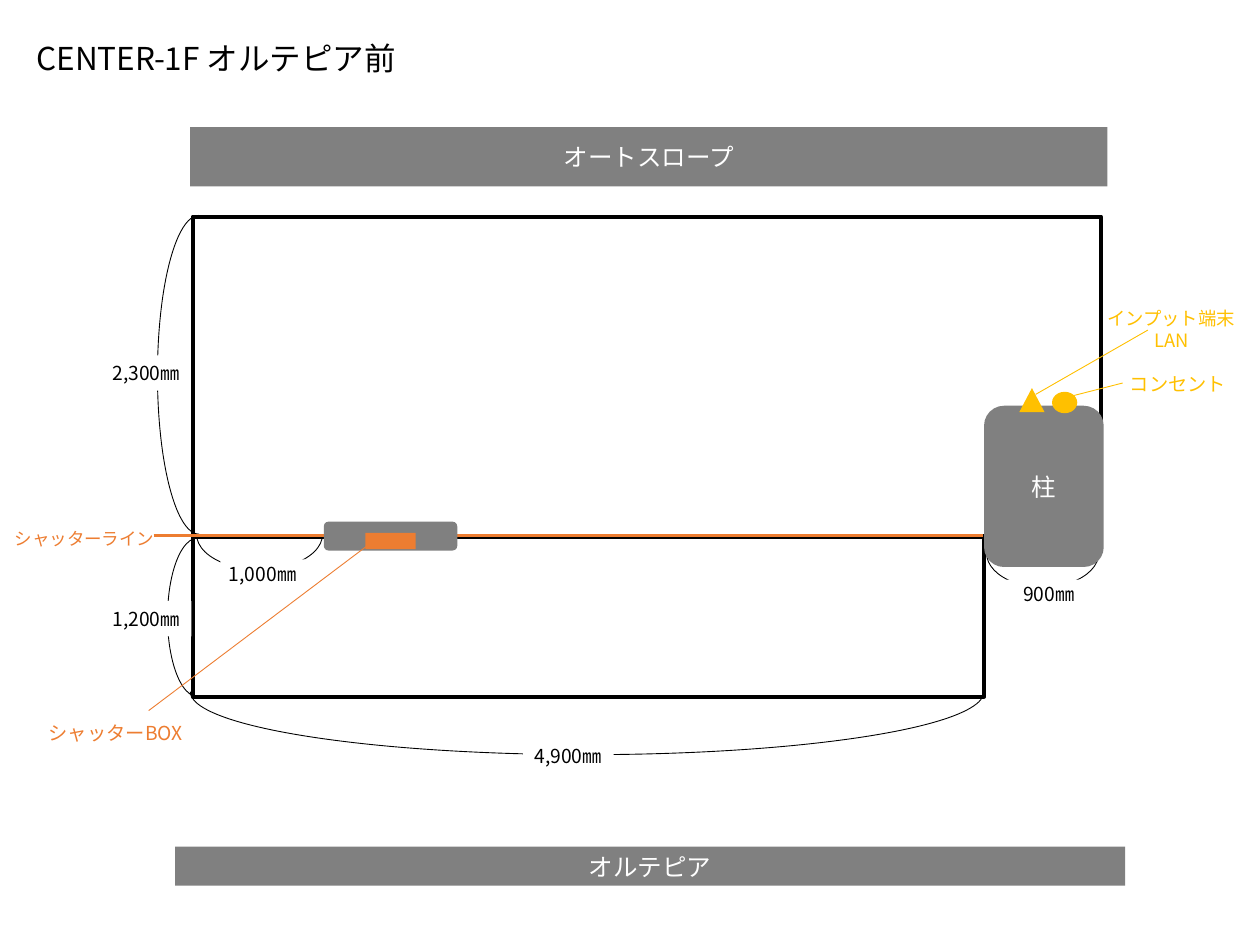
from lxml.etree import SubElement
from pptx import Presentation
from pptx.dml.color import RGBColor
from pptx.enum.shapes import MSO_CONNECTOR, MSO_SHAPE
from pptx.enum.text import MSO_ANCHOR, PP_ALIGN
from pptx.oxml.ns import qn
from pptx.util import Inches, Pt

FONT = "Noto Sans CJK JP"
BLACK, WHITE, GRAY = "000000", "FFFFFF", "808080"
ORANGE, YELLOW = "ED7D31", "FFC000"


def color(hex_string):
    return RGBColor.from_string(hex_string)


class FloorPlan:
    def __init__(self, slide):
        self.slide = slide
        self.shapes = slide.shapes

    def caption(self, owner, text, size, ink, align=PP_ALIGN.CENTER,
                anchor=MSO_ANCHOR.MIDDLE, margin=None):
        frame = owner.text_frame
        frame.text = text
        frame.word_wrap = True
        frame.vertical_anchor = anchor
        if margin is not None:
            frame.margin_left = frame.margin_right = Inches(margin)
            frame.margin_top = frame.margin_bottom = Inches(margin)
        paragraph = frame.paragraphs[0]
        paragraph.alignment = align
        for run in paragraph.runs:
            run.font.size = Pt(size)
            run.font.name = FONT
            run.font.color.rgb = color(ink)
            SubElement(run.font._element, qn("a:ea"), typeface=FONT)

    def block(self, kind, box, fill=None, line=None, width=0.5):
        shape = self.shapes.add_shape(kind, *map(Inches, box))
        shape.shadow.inherit = False
        if fill:
            shape.fill.solid()
            shape.fill.fore_color.rgb = color(fill)
        else:
            shape.fill.background()
        if line:
            shape.line.color.rgb = color(line)
            shape.line.width = Pt(width)
        else:
            shape.line.fill.background()
        return shape

    def named_block(self, kind, box, name):
        self.caption(self.block(kind, box, GRAY), name, 14, WHITE)

    def label(self, box, text, size, ink, **style):
        self.caption(self.shapes.add_textbox(*map(Inches, box)), text, size, ink, **style)

    def line(self, start, end, ink, width=0.5):
        connector = self.shapes.add_connector(
            MSO_CONNECTOR.STRAIGHT, *map(Inches, (*start, *end)))
        connector.line.color.rgb = color(ink)
        connector.line.width = Pt(width)
        SubElement(connector._element.spPr, qn("a:effectLst"))

    def dimension(self, arc, box, text, below=False):
        """Draw a half-round bracket with its length set over the middle."""
        bracket = self.block(MSO_SHAPE.LEFT_BRACKET, arc, line=BLACK)
        bracket.adjustments[0] = arc[3] / arc[2] / 2
        if below:
            bracket.rotation = 270
            bracket._element.spPr.xfrm.set("flipV", "1")
        self.caption(self.block(MSO_SHAPE.RECTANGLE, box, WHITE), text, 11, BLACK, margin=0)


def main():
    prs = Presentation()
    prs.slide_width, prs.slide_height = Inches(10), Inches(7.5)
    plan = FloorPlan(prs.slides.add_slide(prs.slide_layouts[6]))

    # Title and neighbouring areas
    plan.label((0.19, 0.26, 4.02, 0.4), "CENTER-1F オルテピア前", 18, BLACK,
               align=PP_ALIGN.LEFT, anchor=MSO_ANCHOR.TOP)
    plan.named_block(MSO_SHAPE.RECTANGLE, (1.51, 1.01, 7.28, 0.47), "オートスロープ")
    plan.named_block(MSO_SHAPE.RECTANGLE, (1.39, 6.72, 7.54, 0.31), "オルテピア")

    # Dimensions behind the floor outline
    plan.dimension((8.14, 4.08, 0.27, 0.89), (7.99, 4.6, 0.67, 0.23), "900㎜", below=True)
    plan.dimension((1.25, 1.71, 0.33, 2.53), (0.8, 2.82, 0.72, 0.28), "2,300㎜")
    plan.dimension((1.92, 3.88, 0.28, 1), (1.75, 4.44, 0.67, 0.23), "1,000㎜", below=True)
    plan.dimension((4.41, 2.59, 0.5, 6.3), (4.15, 5.86, 0.72, 0.28), "4,900㎜", below=True)

    # Floor outline and pillar
    for floor in ((1.53, 1.72, 7.21, 2.54), (1.53, 4.25, 6.28, 1.28)):
        plan.block(MSO_SHAPE.RECTANGLE, floor, line=BLACK, width=2.25)
    plan.named_block(MSO_SHAPE.ROUNDED_RECTANGLE, (7.81, 3.22, 0.95, 1.28), "柱")
    plan.dimension((1.33, 4.27, 0.24, 1.26), (0.8, 4.77, 0.72, 0.28), "1,200㎜")

    # Shutter line and shutter box
    plan.line((1.22, 4.25), (7.8, 4.25), ORANGE, 2.25)
    plan.label((-0.06, 4.1, 1.46, 0.35), "シャッターライン", 10, ORANGE)
    plan.block(MSO_SHAPE.ROUNDED_RECTANGLE, (2.57, 4.14, 1.06, 0.23), GRAY)
    plan.block(MSO_SHAPE.RECTANGLE, (2.9, 4.23, 0.4, 0.13), ORANGE)
    plan.line((2.93, 4.32), (1.18, 5.64), ORANGE)
    plan.label((0.19, 5.64, 1.46, 0.35), "シャッターBOX", 11, ORANGE)

    # Power outlet and LAN socket
    plan.block(MSO_SHAPE.OVAL, (8.35, 3.11, 0.2, 0.17), YELLOW)
    plan.line((8.91, 3.04), (8.52, 3.14), YELLOW)
    plan.label((8.62, 2.87, 1.46, 0.35), "コンセント", 11, YELLOW)
    plan.block(MSO_SHAPE.FLOWCHART_EXTRACT, (8.09, 3.08, 0.2, 0.19), YELLOW)
    plan.line((9.11, 2.62), (8.22, 3.13), YELLOW)
    plan.label((8.62, 2.44, 1.35, 0.34), "インプット端末LAN", 10.5, YELLOW)

    prs.save("out.pptx")


if __name__ == "__main__":
    main()
